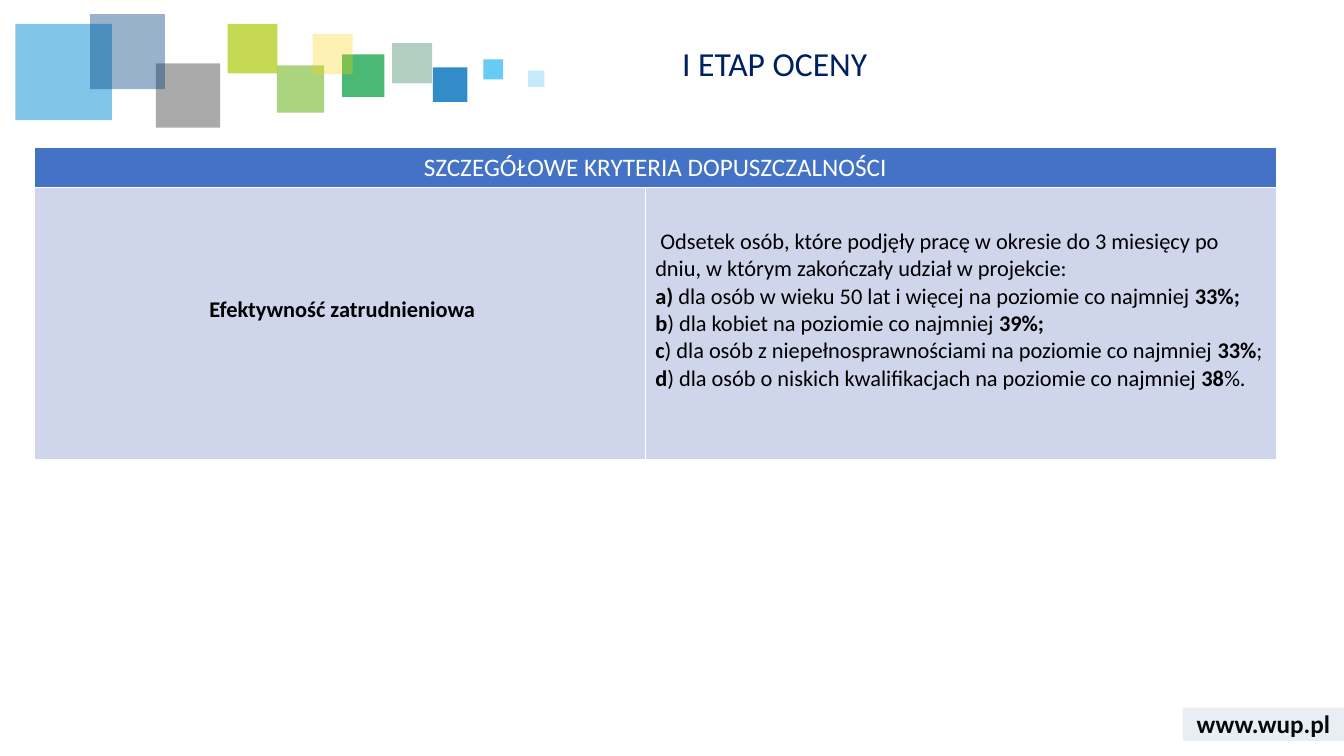
from lxml import etree
from pptx import Presentation
from pptx import util as u
from pptx.dml.color import RGBColor
from pptx.enum import shapes, text
from pptx.oxml.ns import qn

FONT = "Calibri"
BLACK = RGBColor(0x00, 0x00, 0x00)
WHITE = RGBColor(0xFF, 0xFF, 0xFF)
NAVY = RGBColor(0x00, 0x20, 0x60)
HEADER_BLUE = RGBColor(0x44, 0x72, 0xC4)
CELL_BLUE = RGBColor(0xCF, 0xD5, 0xEA)
BAR_BLUE = RGBColor(0x2F, 0x55, 0x97)
PINE = RGBColor(0x00, 0x61, 0x38)
AZURE = RGBColor(0x00, 0x6E, 0xB9)
GREEN = RGBColor(0x00, 0x9A, 0x3C)
CERULEAN = RGBColor(0x02, 0x8B, 0xD3)
LEAF = RGBColor(0x75, 0xB8, 0x2A)
GRAY = RGBColor(0x57, 0x57, 0x57)
DEEP_BLUE = RGBColor(0x00, 0x3D, 0x7C)
SKY = RGBColor(0x40, 0xC0, 0xF1)
LIME = RGBColor(0xAF, 0xCA, 0x0B)
YELLOW = RGBColor(0xFE, 0xD0, 0x00)

SQUARES = [
    (9.88, 1.09, 1.01, PINE, 30),
    (10.91, 1.7, 0.87, AZURE, 80),
    (8.62, 1.37, 1.07, GREEN, 70),
    (0.39, 0.6, 2.43, CERULEAN, 50),
    (6.98, 1.65, 1.19, LEAF, 60),
    (3.93, 1.6, 1.62, GRAY, 50),
    (2.27, 0.36, 1.89, DEEP_BLUE, 40),
    (12.18, 1.5, 0.5, SKY, 80),
    (5.74, 0.6, 1.25, LIME, 70),
    (7.88, 0.86, 1.01, YELLOW, 30),
    (13.31, 1.78, 0.41, SKY, 30),
]

CRITERION = [[(" Efektywność zatrudnieniowa", True)]]
THRESHOLDS = [
    [(" Odsetek osób, które podjęły pracę w okresie do 3 miesięcy po dniu, "
      "w którym zakończały udział w projekcie:", False)],
    [("a) ", True),
     ("dla osób w wieku 50 lat i więcej na poziomie co najmniej ", False),
     ("33%;", True)],
    [("b", True), (") dla kobiet na poziomie co najmniej ", False),
     ("39%;", True)],
    [("c", True),
     (") dla osób z niepełnosprawnościami na poziomie co najmniej ", False),
     ("33%", True), (";", False)],
    [("d", True),
     (") dla osób o niskich kwalifikacjach na poziomie co najmniej ", False),
     ("38", True), ("%.", False)],
]


def style_paragraph(para, size, color, align):
    para.alignment = align
    para.font.name = FONT
    para.font.size = u.Pt(size)
    para.font.color.rgb = color


def add_rectangle(page, left, top, width, height, color, opacity):
    box = page.shapes.add_shape(
        shapes.MSO_SHAPE.RECTANGLE,
        u.Cm(left), u.Cm(top), u.Cm(width), u.Cm(height))
    box.shadow.inherit = False
    box.line.fill.background()
    box.fill.solid()
    box.fill.fore_color.rgb = color
    tint = next(box.fill._xPr.iter(qn("a:srgbClr")))
    etree.SubElement(tint, qn("a:alpha"), val=str(opacity * 1000))


def add_label(page, left, top, width, height, wording, size, color, align):
    box = page.shapes.add_textbox(
        u.Cm(left), u.Cm(top), u.Cm(width), u.Cm(height))
    box.text_frame.word_wrap = True
    para = box.text_frame.paragraphs[0]
    para.text = wording
    style_paragraph(para, size, color, align)
    return box.text_frame


def fill_cell(cell, lines, size, color, align, background):
    cell.fill.solid()
    cell.fill.fore_color.rgb = background
    frame = cell.text_frame
    for index, line in enumerate(lines):
        para = frame.add_paragraph() if index else frame.paragraphs[0]
        style_paragraph(para, size, color, align)
        for wording, bold in line:
            span = para.add_run()
            span.text = wording
            span.font.bold = bold


def add_criteria_table(page):
    table = page.shapes.add_table(
        2, 2, u.Cm(0.87), u.Cm(3.71), u.Cm(31.29), u.Cm(7.88)).table
    for column, width in zip(table.columns, (15.39, 15.9)):
        column.width = u.Cm(width)
    for row, height in zip(table.rows, (1.02, 6.86)):
        row.height = u.Cm(height)
    header = table.cell(0, 0)
    header.merge(table.cell(0, 1))
    fill_cell(header, [[("SZCZEGÓŁOWE KRYTERIA DOPUSZCZALNOŚCI", False)]],
              18, WHITE, text.PP_ALIGN.CENTER, HEADER_BLUE)
    columns = ((CRITERION, text.PP_ALIGN.CENTER),
               (THRESHOLDS, text.PP_ALIGN.LEFT))
    for index, (lines, align) in enumerate(columns):
        cell = table.cell(1, index)
        fill_cell(cell, lines, 16, BLACK, align, CELL_BLUE)
        cell.vertical_anchor = text.MSO_ANCHOR.MIDDLE
        cell.margin_bottom = u.Cm(0.82)


def main():
    deck = Presentation()
    deck.slide_width = u.Cm(33.87)
    deck.slide_height = u.Cm(19.05)
    page = deck.slides.add_slide(deck.slide_layouts[6])

    site = add_label(page, 29.81, 17.71, 4.06, 1.03, "www.wup.pl",
                     18, BLACK, text.PP_ALIGN.CENTER)
    site.vertical_anchor = text.MSO_ANCHOR.MIDDLE
    site.paragraphs[0].font.bold = True
    for left, top, side, color, opacity in SQUARES:
        add_rectangle(page, left, top, side, side, color, opacity)
    add_rectangle(page, 29.81, 17.83, 4.06, 0.84, BAR_BLUE, 10)

    title = add_label(page, 16.94, 1.07, 16.15, 1.4, "I ETAP OCENY",
                      24, NAVY, text.PP_ALIGN.LEFT)
    title.paragraphs[0].line_spacing = 0.9
    add_criteria_table(page)
    deck.save("out.pptx")


if __name__ == "__main__":
    main()
